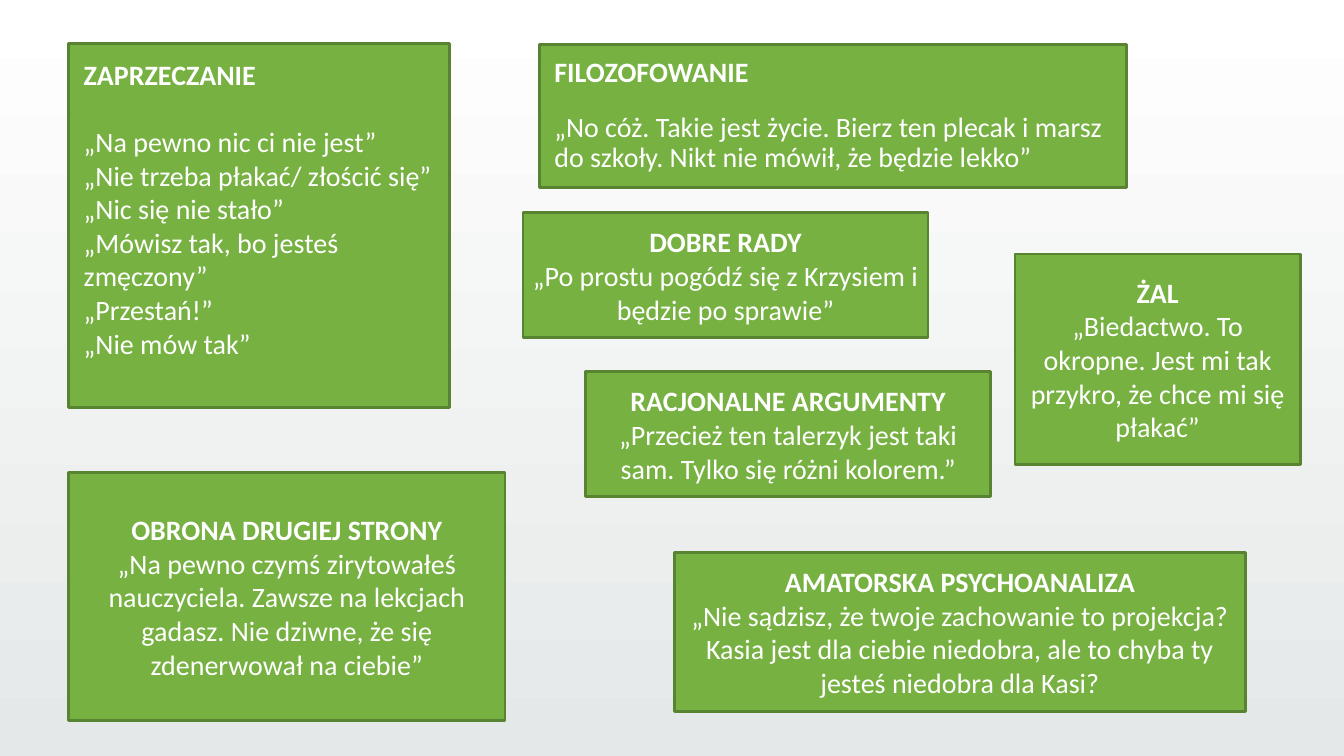
"""Build a slide of seven boxes showing unhelpful replies to a child's feelings."""
from dataclasses import dataclass

from pptx import Presentation
from pptx.dml.color import RGBColor
from pptx.enum.shapes import MSO_SHAPE
from pptx.enum.text import MSO_ANCHOR, PP_ALIGN
from pptx.slide import Slide
from pptx.util import Cm, Pt


@dataclass(frozen=True)
class Theme:
    font: str = "Calibri"
    text_size: int = 20
    line_width: int = 2
    text: RGBColor = RGBColor(0xFF, 0xFF, 0xFF)
    box_fill: RGBColor = RGBColor(0x77, 0xB1, 0x42)
    box_line: RGBColor = RGBColor(0x58, 0x83, 0x31)
    page_top: RGBColor = RGBColor(0xFF, 0xFF, 0xFF)
    page_bottom: RGBColor = RGBColor(0xE5, 0xE8, 0xE8)


@dataclass(frozen=True)
class ReplyBox:
    left: float
    top: float
    width: float
    height: float
    heading: str
    replies: tuple[str, ...]
    alignment: PP_ALIGN = PP_ALIGN.CENTER
    left_inset: float = 0.25
    bottom_inset: float = 0.13
    heading_gap: float = 0
    line_spacing: float = 1.0


THEME = Theme()

REPLY_BOXES = (
    ReplyBox(13.59, 1.12, 14.81, 3.61, "FILOZOFOWANIE",
             ("„No cóż. Takie jest życie. Bierz ten plecak i marsz do szkoły. "
              "Nikt nie mówił, że będzie lekko”",),
             PP_ALIGN.LEFT, left_inset=0.38, heading_gap=18, line_spacing=0.9),
    ReplyBox(1.73, 1.09, 9.6, 9.19, "ZAPRZECZANIE",
             ("„Na pewno nic ci nie jest”",
              "„Nie trzeba płakać/ złościć się”",
              "„Nic się nie stało”",
              "„Mówisz tak, bo jesteś zmęczony”",
              "„Przestań!”",
              "„Nie mów tak”"),
             PP_ALIGN.LEFT, left_inset=0.38, bottom_inset=0.99, heading_gap=24),
    ReplyBox(13.18, 5.36, 10.21, 3.15, "DOBRE RADY",
             ("„Po prostu pogódź się z Krzysiem i będzie po sprawie”",)),
    ReplyBox(1.73, 11.91, 11, 6.25, "OBRONA DRUGIEJ STRONY",
             ("„Na pewno czymś zirytowałeś nauczyciela. Zawsze na lekcjach gadasz. "
              "Nie dziwne, że się zdenerwował na ciebie”",)),
    ReplyBox(25.58, 6.4, 7.19, 5.31, "ŻAL",
             ("„Biedactwo. To okropne. Jest mi tak przykro, że chce mi się płakać”",)),
    ReplyBox(16.99, 13.92, 14.4, 4.01, "AMATORSKA PSYCHOANALIZA",
             ("„Nie sądzisz, że twoje zachowanie to projekcja? Kasia jest dla ciebie "
              "niedobra, ale to chyba ty jesteś niedobra dla Kasi?",)),
    ReplyBox(14.76, 9.37, 10.21, 3.15, "RACJONALNE ARGUMENTY",
             ("„Przecież ten talerzyk jest taki sam. Tylko się różni kolorem.”",)),
)


def paint_background(page: Slide) -> None:
    fill = page.background.fill
    fill.gradient()
    fill.gradient_angle = 270
    for stop, colour in zip(fill.gradient_stops, (THEME.page_top, THEME.page_bottom)):
        stop.color.rgb = colour


def draw_reply_box(page: Slide, reply_box: ReplyBox) -> None:
    box = page.shapes.add_shape(
        MSO_SHAPE.RECTANGLE, Cm(reply_box.left), Cm(reply_box.top),
        Cm(reply_box.width), Cm(reply_box.height))
    box.shadow.inherit = False
    box.fill.solid()
    box.fill.fore_color.rgb = THEME.box_fill
    box.line.color.rgb = THEME.box_line
    box.line.width = Pt(THEME.line_width)

    frame = box.text_frame
    frame.word_wrap = True
    frame.vertical_anchor = MSO_ANCHOR.MIDDLE
    frame.margin_left = Cm(reply_box.left_inset)
    frame.margin_right = Cm(0.25)
    frame.margin_top = Cm(0.13)
    frame.margin_bottom = Cm(reply_box.bottom_inset)

    for index, text in enumerate((reply_box.heading, *reply_box.replies)):
        para = frame.add_paragraph() if index else frame.paragraphs[0]
        para.text = text
        para.alignment = reply_box.alignment
        para.line_spacing = reply_box.line_spacing
        para.space_before = Pt(reply_box.heading_gap if index == 1 else 0)
        para.font.name = THEME.font
        para.font.size = Pt(THEME.text_size)
        para.font.bold = index == 0
        para.font.color.rgb = THEME.text


def main() -> None:
    deck = Presentation()
    deck.slide_width = Cm(33.87)
    deck.slide_height = Cm(19.05)
    page = deck.slides.add_slide(deck.slide_layouts.get_by_name("Blank"))
    paint_background(page)
    for reply_box in REPLY_BOXES:
        draw_reply_box(page, reply_box)
    deck.save("out.pptx")


if __name__ == "__main__":
    main()
